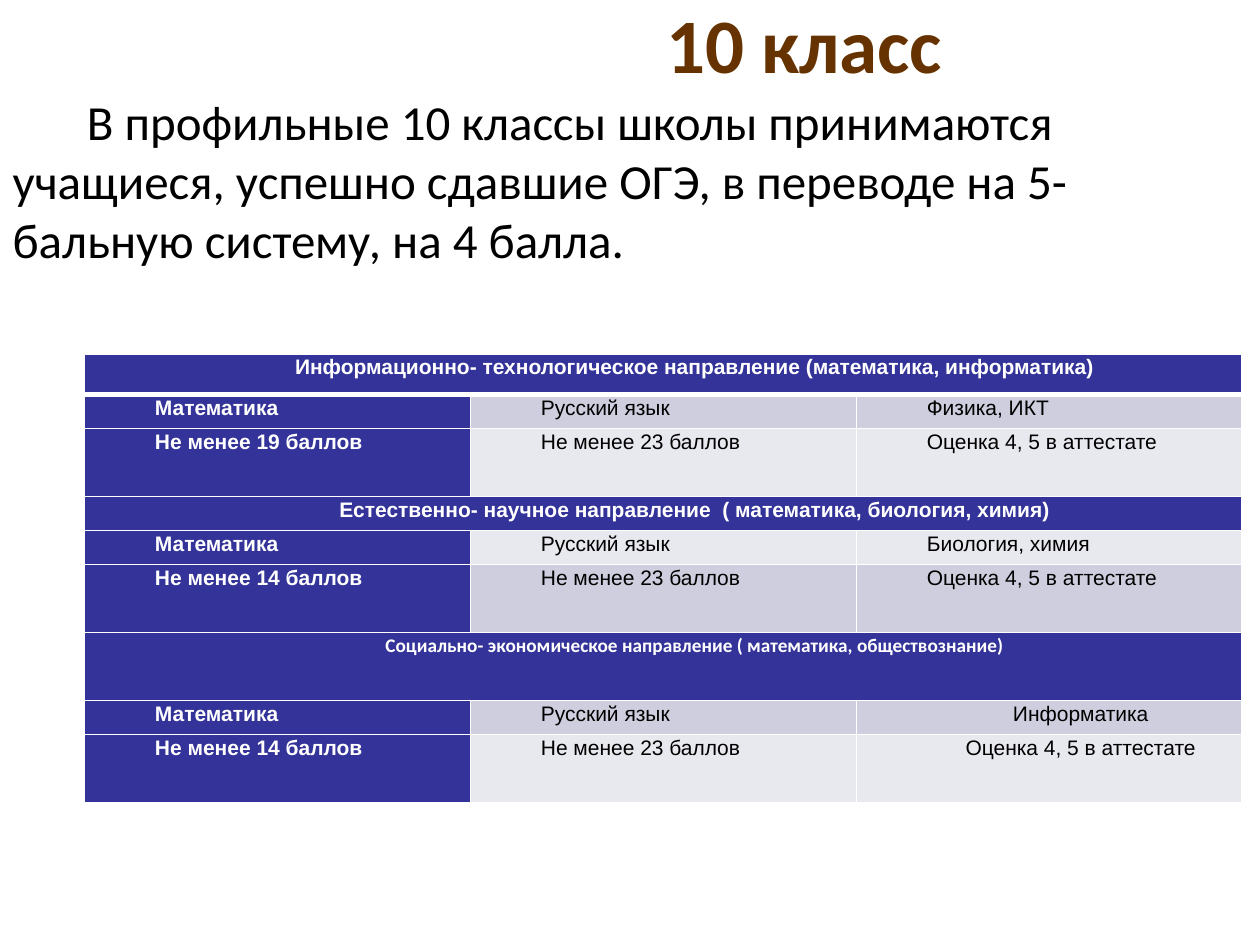
"""Build the slide on admission rules for the 10th form."""
import pptx
import pptx.dml.color
import pptx.enum.text
import pptx.oxml
import pptx.oxml.ns
import pptx.util

Inches = pptx.util.Inches
Pt = pptx.util.Pt
ALIGN = pptx.enum.text.PP_ALIGN
ANCHOR = pptx.enum.text.MSO_ANCHOR
NAMESPACE = pptx.oxml.ns.nsdecls("a")

WHITE, BLACK, BROWN, NAVY = "FFFFFF", "000000", "663300", "333399"
BANDS = ("E8E8EF", "CECEDE")
ROW_HEIGHTS = (0.32, 0.27, 0.54, 0.27, 0.27, 0.54, 0.54, 0.27, 0.54)
HEADING_ROWS = (0, 3, 6)
ROWS = (
    ("Информационно- технологическое направление (математика, информатика)",),
    ("Математика", "Русский язык", "Физика, ИКТ"),
    ("Не менее 19 баллов", "Не менее 23 баллов", "Оценка 4, 5 в аттестате"),
    ("Естественно- научное направление  ( математика, биология, химия)",),
    ("Математика", "Русский язык", "Биология, химия"),
    ("Не менее 14 баллов", "Не менее 23 баллов", "Оценка 4, 5 в аттестате"),
    ("Социально- экономическое направление ( математика, обществознание)",),
    ("Математика", "Русский язык", "Информатика"),
    ("Не менее 14 баллов", "Не менее 23 баллов", "Оценка 4, 5 в аттестате"),
)


def color(value):
    return pptx.dml.color.RGBColor.from_string(value)


def apply(target, values):
    for name, value in values.items():
        setattr(target, name, value)


class SlideBuilder:
    def __init__(self, presentation):
        self.slide = presentation.slides.add_slide(presentation.slide_layouts[1])
        self.title_font = {"name": "Calibri", "size": Pt(44), "bold": True}
        self.body_font = {"name": "Calibri", "size": Pt(28), "bold": False}
        self.cell_font = {"name": "Arial", "size": Pt(12)}
        self.cell_margins = {
            "margin_left": Inches(0.06), "margin_right": Inches(0.06),
            "margin_top": 0, "margin_bottom": 0,
        }

    def place(self, shape, anchor, left, top, width, height):
        apply(shape, {"left": Inches(left), "top": Inches(top),
                      "width": Inches(width), "height": Inches(height)})
        apply(shape.text_frame, {"vertical_anchor": anchor, "word_wrap": True,
                                 "auto_size": pptx.enum.text.MSO_AUTO_SIZE.NONE})

    def add_text(self, paragraph, text, font, text_color, indents, layout):
        properties = paragraph._p.get_or_add_pPr()
        for name, value in zip(("marL", "indent"), indents):
            properties.set(name, str(Inches(value)))
        apply(paragraph, layout)
        run = paragraph.add_run()
        run.text = text
        apply(run.font, font)
        run.font.color.rgb = color(text_color)

    def title(self, text, *box):
        shape = self.slide.shapes.title
        self.place(shape, ANCHOR.MIDDLE, *box)
        shape.fill.solid()
        shape.fill.fore_color.rgb = color(WHITE)
        shape.line.color.rgb = color(WHITE)
        shape.line.width = Pt(1.5)
        self.add_text(shape.text_frame.paragraphs[0], text, self.title_font, BROWN,
                      (0, 0), {"alignment": ALIGN.RIGHT})

    def body(self, text, *box):
        shape = self.slide.placeholders[1]
        self.place(shape, ANCHOR.TOP, *box)
        paragraph = shape.text_frame.paragraphs[0]
        paragraph._p.get_or_add_pPr().append(
            pptx.oxml.parse_xml(f"<a:buNone {NAMESPACE}/>"))
        self.add_text(paragraph, text, self.body_font, BLACK, (0, 0.59),
                      {"alignment": ALIGN.LEFT, "space_before": Pt(0)})

    def borders(self, cell, bottom):
        properties = cell._tc.get_or_add_tcPr()
        for side, width in (("L", 1), ("R", 1), ("T", 1), ("B", bottom)):
            properties.append(pptx.oxml.parse_xml(
                f'<a:ln{side} {NAMESPACE} w="{Pt(width)}"><a:solidFill>'
                f'<a:srgbClr val="{WHITE}"/></a:solidFill></a:ln{side}>'))

    def cell(self, cell, text, fill, text_color, alignment, **font):
        apply(cell, self.cell_margins)
        cell.fill.solid()
        cell.fill.fore_color.rgb = color(fill)
        if text:
            self.add_text(cell.text_frame.paragraphs[0], text, {**self.cell_font, **font},
                          text_color, (0.5, 0),
                          {"alignment": alignment, "line_spacing": 1.07})

    def table(self, left, top, width):
        table = self.slide.shapes.add_table(
            len(ROWS), 3, Inches(left), Inches(top), Inches(width),
            Inches(sum(ROW_HEIGHTS))).table
        for column in table.columns:
            column.width = Inches(width / 3)
        for index, (texts, height) in enumerate(zip(ROWS, ROW_HEIGHTS)):
            table.rows[index].height = Inches(height)
            heading = index in HEADING_ROWS
            last_group = index >= HEADING_ROWS[-1]
            if heading:
                table.cell(index, 0).merge(table.cell(index, 2))
            for column in range(3):
                cell = table.cell(index, column)
                self.borders(cell, 3 if index == 0 else 1)
                strong = heading or column == 0
                centered = heading or (last_group and column == 2)
                special = {"name": "Calibri", "size": Pt(11)} if heading and last_group else {}
                self.cell(cell, texts[column] if column < len(texts) else "",
                          NAVY if strong else BANDS[index % 2],
                          WHITE if strong else BLACK,
                          ALIGN.CENTER if centered else ALIGN.JUSTIFY,
                          bold=strong, **special)


def main():
    presentation = pptx.Presentation()
    apply(presentation, {"slide_width": Inches(10), "slide_height": Inches(7.5)})
    builder = SlideBuilder(presentation)
    builder.title("10 класс", 0.53, 0, 7.05, 0.68)
    builder.body("В профильные 10 классы школы принимаются учащиеся, успешно сдавшие ОГЭ, "
                 "в переводе на 5-бальную систему, на 4 балла.", 0, 0.68, 10, 6.75)
    builder.table(0.67, 2.81, 9.19)
    presentation.save("out.pptx")


if __name__ == "__main__":
    main()
